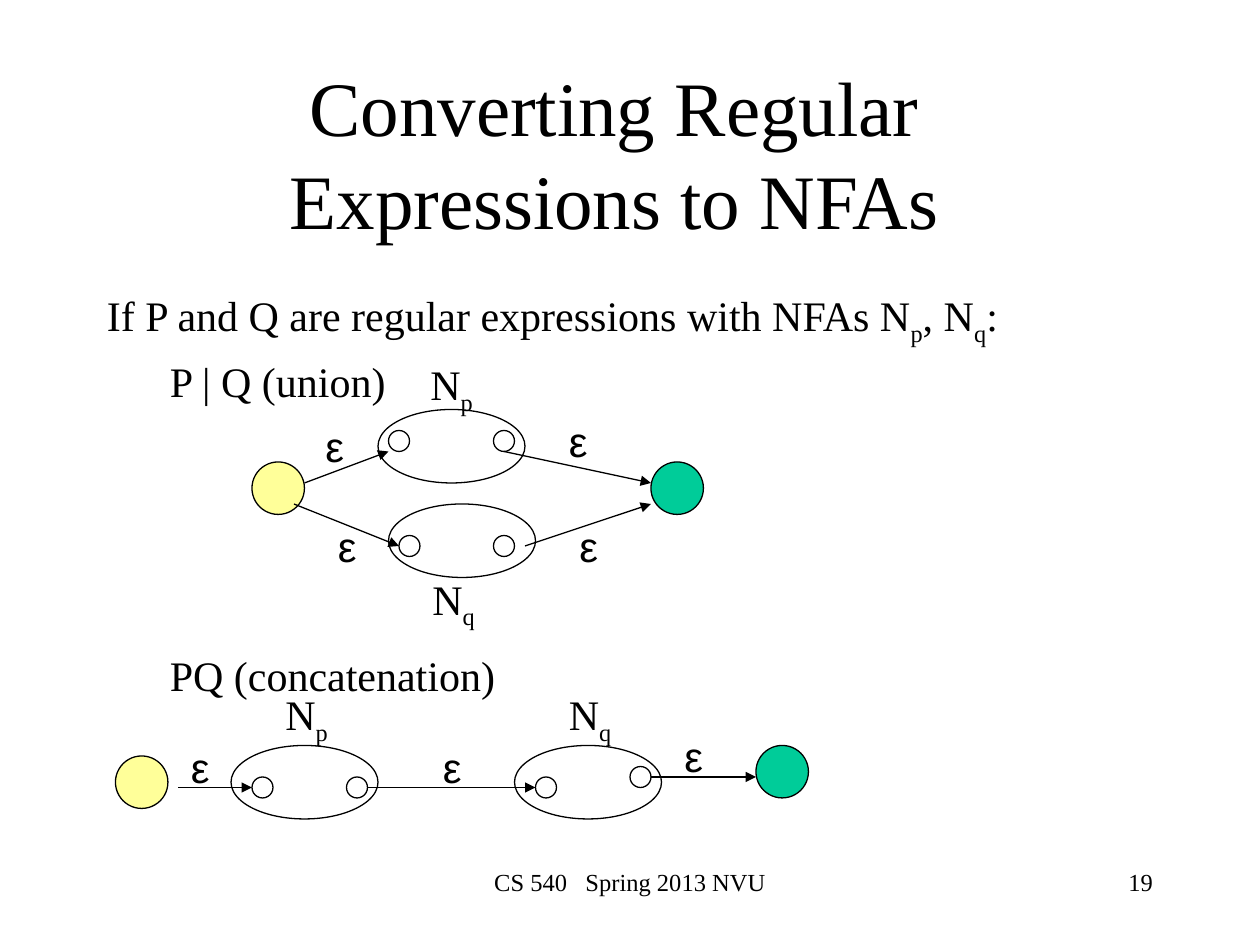
from lxml.etree import SubElement
from pptx import Presentation
from pptx.dml.color import RGBColor
from pptx.enum.shapes import MSO_CONNECTOR, MSO_SHAPE
from pptx.enum.text import MSO_ANCHOR as Anchor, MSO_AUTO_SIZE as AutoSize, PP_ALIGN as Align
from pptx.oxml.ns import qn
from pptx.util import Emu, Pt

PX = 7620  # EMU per px, 120 px to the inch
BLACK, YELLOW, GREEN = "000000", "FFFF99", "00CC99"


def px(*lengths):
    return [Emu(length * PX) for length in lengths]


def color(hex_string):
    return RGBColor.from_string(hex_string)


def write(paragraph, text, size=24, font="Times New Roman", align=Align.LEFT, before=0, indent=0):
    """Fill a paragraph; parts between ~ marks become subscripts."""
    paragraph.alignment = align
    paragraph.space_before = Pt(before)
    if indent:
        paragraph._p.get_or_add_pPr().set("marL", str(indent * PX))
    for position, part in enumerate(text.split("~")):
        run = paragraph.add_run()
        run.text = part
        run.font.size, run.font.name = Pt(size), font
        run.font.color.rgb = color(BLACK)
        if position % 2:
            run.font._element.set("baseline", "-25000")


class NfaSlide:
    line_width = Pt(0.75)
    state_size, inner_size = 50, 20
    network_width, network_height = 140, 70

    def __init__(self, deck):
        self.slide = deck.slides.add_slide(deck.slide_layouts[5])
        self.shapes = self.slide.shapes

    def title(self, text, x, y, width, height):
        heading = self.shapes.title
        heading.left, heading.top, heading.width, heading.height = px(x, y, width, height)
        frame = heading.text_frame
        frame.word_wrap, frame.auto_size = True, AutoSize.NONE
        frame.vertical_anchor = Anchor.MIDDLE
        write(frame.paragraphs[0], text, size=44, align=Align.CENTER)

    def text(self, x, y, width, height, *, wrap=True):
        frame = self.shapes.add_textbox(*px(x, y, width, height)).text_frame
        frame.word_wrap = wrap
        frame.auto_size = AutoSize.NONE if wrap else AutoSize.SHAPE_TO_FIT_TEXT
        return frame.paragraphs[0], frame

    def label(self, text, x, y, width, **style):
        paragraph, _ = self.text(x, y, width, 60, wrap=False)
        write(paragraph, text, **style)

    def ellipse(self, x, y, width, height, fill=None):
        oval = self.shapes.add_shape(MSO_SHAPE.OVAL, *px(x, y, width, height))
        oval.shadow.inherit = False
        oval.line.color.rgb, oval.line.width = color(BLACK), self.line_width
        if fill:
            oval.fill.solid()
            oval.fill.fore_color.rgb = color(fill)
        else:
            oval.fill.background()

    def state(self, x, y, fill):
        self.ellipse(x, y, self.state_size, self.state_size, fill)

    def network(self, x, y, name, name_offset, start_offset, accept_offset):
        """Draw a sub-automaton; its name and inner states are offset from its corner."""
        self.ellipse(x, y, self.network_width, self.network_height)
        for dx, dy in (start_offset, accept_offset):
            self.ellipse(x + dx, y + dy, self.inner_size, self.inner_size)
        self.label(name, x + name_offset[0], y + name_offset[1], 66)

    def arrow(self, x1, y1, x2, y2):
        move = self.shapes.add_connector(MSO_CONNECTOR.STRAIGHT, *px(x1, y1, x2, y2))
        move.line.color.rgb, move.line.width = color(BLACK), self.line_width
        SubElement(move.line._get_or_add_ln(), qn("a:tailEnd"), type="triangle")
        SubElement(move._element.spPr, qn("a:effectLst"))


def main():
    deck = Presentation()
    deck.slide_width, deck.slide_height = px(1200, 900)
    page = NfaSlide(deck)

    page.title("Converting Regular Expressions to NFAs", 100, 80, 970, 130)
    intro, body = page.text(90, 270, 1020, 540)
    write(intro, "If P and Q are regular expressions with NFAs N~p~, N~q~:", before=4.8)
    for operation, before in (("P | Q (union)", 4.8), ("PQ (concatenation)", 139)):
        write(body.add_paragraph(), operation, before=before, indent=60)

    networks = [
        (360, 390, "N~p", (38, -54), (10, 20), (110, 20)),
        (370, 480, "N~q", (30, 60), (10, 30), (100, 30)),
        (220, 710, "N~p", (40, -60), (20, 30), (110, 30)),
        (490, 710, "N~q", (40, -60), (20, 30), (110, 20)),
    ]
    for network in networks:
        page.network(*network)

    states = [(240, 440, YELLOW), (620, 440, GREEN), (110, 720, YELLOW), (720, 710, GREEN)]
    for state in states:
        page.state(*state)

    # Each move: its arrow from start to end, then the place of its ε
    moves = [
        ((290, 460, 370, 430), (298, 395)),
        ((280, 480, 380, 520), (310, 490)),
        ((480, 430, 620, 460), (530, 390)),
        ((500, 520, 620, 480), (540, 490)),
        ((170, 750, 240, 750), (170, 700)),
        ((350, 750, 510, 750), (410, 700)),
        ((620, 740, 720, 740), (640, 690)),
    ]
    for ends, epsilon_place in moves:
        page.arrow(*ends)
        page.label("ε", *epsilon_place, 42, font="Arial")

    course, _ = page.text(410, 820, 380, 60)
    write(course, "CS 540   Spring 2013 NVU", size=14, align=Align.CENTER)
    page_number, _ = page.text(860, 820, 250, 60)
    write(page_number, "19", size=14, align=Align.RIGHT)

    deck.save("out.pptx")


if __name__ == "__main__":
    main()
